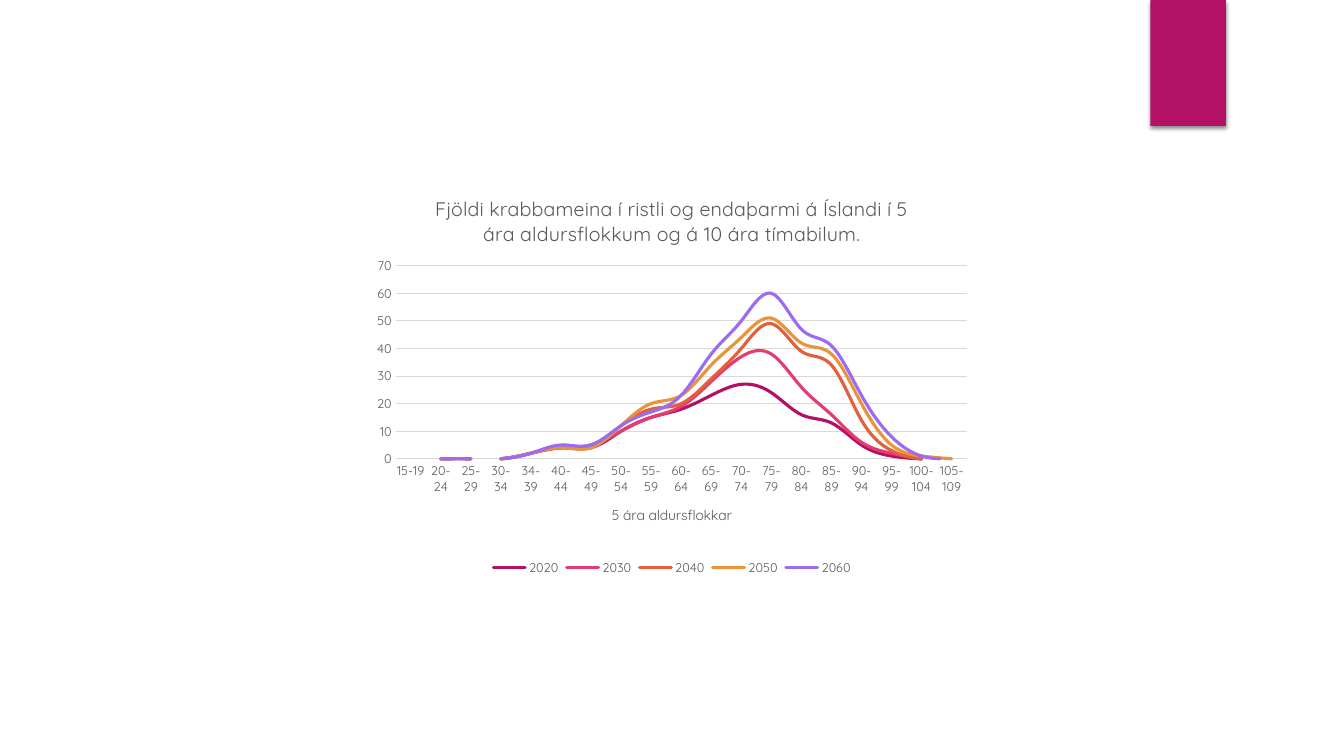
from dataclasses import dataclass

from pptx import Presentation, oxml
from pptx import util as u
from pptx.chart import data as cd
from pptx.dml.color import RGBColor
from pptx.enum import chart as ch, shapes
from pptx.oxml import ns


@dataclass(frozen=True)
class Theme:
    """Colours, font and type sizes of the slide."""
    font: str = "Quicksand"
    text: str = "595959"
    grid: str = "D9D9D9"
    accent: str = "B31166"
    lines: tuple = ("B31166", "E33D6F", "E45F3C", "E9943A", "9B6BF2")
    head: float = 14
    name: float = 10
    small: float = 9


THEME = Theme()
AGES = ["15-19", "20-24", "25-29", "30-34", "34-39", "40-44", "45-49",
        "50-54", "55-59", "60-64", "65-69", "70-74", "75-79", "80-84",
        "85-89", "90-94", "95-99", "100-104", "105-109"]
CASES = {
    "2020": (0, 0, 0, 0, 2, 4, 4, 10, 15, 18, 23, 27, 24, 16, 13, 5, 1, 0, 0),
    "2030": (0, 0, 0, 0, 2, 4, 5, 10, 15, 19, 28, 37, 38, 26, 16, 6, 2, 0, 0),
    "2040": (0, 0, 0, 0, 2, 4, 5, 12, 18, 20, 29, 40, 49, 39, 34, 14, 3, 0, 0),
    "2050": (0, 0, 0, 0, 2, 4, 4, 12, 20, 23, 34, 44, 51, 42, 38, 20, 5, 1, 0),
    "2060": (0, 0, 0, 0, 2, 5, 5, 12, 17, 23, 38, 50, 60, 47, 41, 23, 8, 1, 0),
}


def style(font, size):
    """Give a font the chart's typeface, colour and weight."""
    font.name, font.size, font.bold = THEME.font, u.Pt(size), False
    font.color.rgb = RGBColor.from_string(THEME.text)


def stroke(line, color, width):
    """Draw a line in one colour and width."""
    line.color.rgb = RGBColor.from_string(color)
    line.width = u.Pt(width)


def label(owner, words, size):
    """Title a chart or an axis."""
    frame = owner.text_frame
    frame.text = words
    style(frame.paragraphs[0].font, size)


def ribbon(slide, box):
    """Place the coloured tab with its soft shadow."""
    tab = slide.shapes.add_shape(shapes.MSO_SHAPE.RECTANGLE, *map(u.Inches, box))
    tab.fill.solid()
    tab.fill.fore_color.rgb = RGBColor.from_string(THEME.accent)
    tab.line.fill.background()
    tab.shadow.inherit = False
    glow = tab._element.spPr.find(ns.qn("a:effectLst"))
    glow.append(oxml.parse_xml(
        f'<a:outerShdw {ns.nsdecls("a")} blurRad="38100" dist="25400" '
        'dir="5400000" rotWithShape="0"><a:srgbClr val="000000">'
        '<a:alpha val="45000"/></a:srgbClr></a:outerShdw>'))


def layout(chart, x, y, w, h):
    """Fix the inner plot area as shares of the chart."""
    area = chart._chartSpace.chart.plotArea
    for old in area.findall(ns.qn("c:layout")):
        area.remove(old)
    parts = "".join(f'<c:{key} val="{val}"/>' for key, val in (
        ("layoutTarget", "inner"), ("xMode", "edge"), ("yMode", "edge"),
        ("x", x), ("y", y), ("w", w), ("h", h)))
    area.insert(0, oxml.parse_xml(
        f'<c:layout {ns.nsdecls("c")}><c:manualLayout>{parts}'
        '</c:manualLayout></c:layout>'))


def curves(slide, box):
    """Place the line chart of cases by age group and decade."""
    data = cd.CategoryChartData(number_format="General")
    data.categories = AGES
    for year, vals in CASES.items():
        data.add_series(year, vals)
    chart = slide.shapes.add_chart(
        ch.XL_CHART_TYPE.LINE, *map(u.Inches, box), data).chart
    style(chart.font, THEME.small)
    chart.has_title = True
    label(chart.chart_title, "Fjöldi krabbameina í ristli og endaþarmi á Íslandi "
          "í 5 ára aldursflokkum og á 10 ára tímabilum.", THEME.head)
    chart.chart_title.include_in_layout = False

    chart.has_legend = True
    chart.legend.position = ch.XL_LEGEND_POSITION.BOTTOM
    chart.legend.include_in_layout = False
    style(chart.legend.font, THEME.small)

    ages, count = chart.category_axis, chart.value_axis
    for axis in (ages, count):
        axis.major_tick_mark = axis.minor_tick_mark = ch.XL_TICK_MARK.NONE
        style(axis.tick_labels.font, THEME.small)
    label(ages.axis_title, "5 ára aldursflokkar", THEME.name)
    stroke(ages.format.line, THEME.grid, 0.75)
    count.minimum_scale, count.maximum_scale, count.major_unit = 0, 70, 10
    count.format.line.fill.background()
    stroke(count.major_gridlines.format.line, THEME.grid, 0.75)

    plot = chart.plots[0]
    plot.vary_by_categories = False
    for curve, color in zip(plot.series, THEME.lines):
        curve.smooth = True
        curve.marker.style = ch.XL_MARKER_STYLE.NONE
        stroke(curve.format.line, color, 2.25)
        curve.format.line._get_or_add_ln().set("cap", "rnd")
    layout(chart, 0.05, 0.22, 0.93, 0.48)


def main():
    """Build and save the slide."""
    deck = Presentation()
    deck.slide_width, deck.slide_height = u.Inches(13.33), u.Inches(7.5)
    slide = deck.slides.add_slide(deck.slide_layouts[6])
    ribbon(slide, (11.41, 0, 0.75, 1.25))
    curves(slide, (3.62, 1.76, 6.09, 3.99))
    deck.save("out.pptx")


if __name__ == "__main__":
    main()
